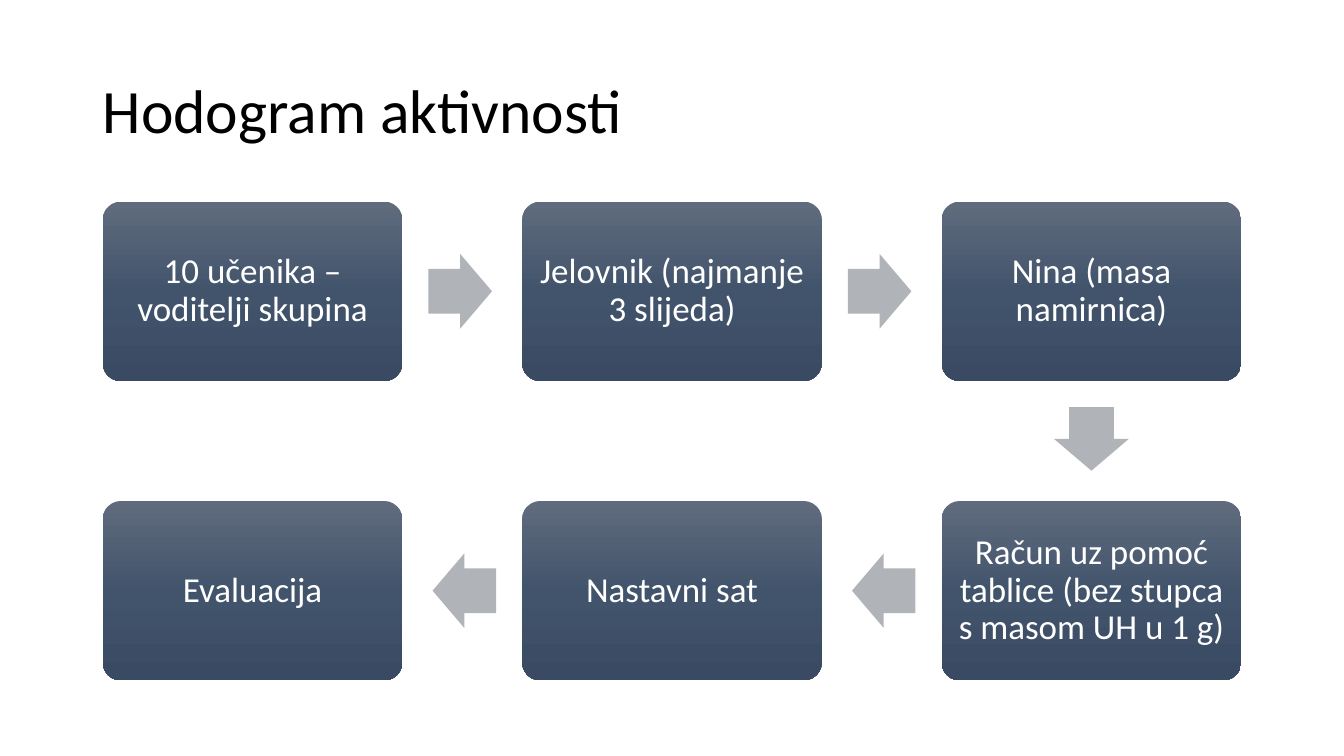
from copy import deepcopy
from dataclasses import dataclass
from math import atan2, degrees, hypot

from lxml import etree
from pptx import Presentation
from pptx.dml.color import RGBColor
from pptx.enum.shapes import MSO_SHAPE as SHAPE
from pptx.enum.text import MSO_ANCHOR as ANCHOR, PP_ALIGN as ALIGN
from pptx.oxml.ns import qn
from pptx.util import Inches, Pt


@dataclass(frozen=True)
class Theme:
    font: str = "Calibri"
    title_size: int = 44
    step_size: int = 25
    title_color: str = "000000"
    step_color: str = "FFFFFF"
    arrow_color: str = "B0B4B9"
    gradient: tuple = ((0, "606B7D"), (0.5, "42546C"), (1, "394A62"))


THEME = Theme()
STEPS = [
    "10 učenika – voditelji skupina",
    "Jelovnik (najmanje 3 slijeda)",
    "Nina (masa namirnica)",
    "Račun uz pomoć tablice (bez stupca s masom UH u 1 g)",
    "Nastavni sat",
    "Evaluacija",
]
COLUMNS = 3
STEP_W, STEP_H = 2.97, 1.78
ARROW_W, ARROW_H = 0.63, 0.74
ARROW_SHIFT = 0.02  # arrows sit slightly nearer the step they leave


def write(shape, text, size, color, align):
    tf = shape.text_frame
    tf.word_wrap = True
    tf.vertical_anchor = ANCHOR.MIDDLE
    p = tf.paragraphs[0]
    p.text = text
    p.alignment = align
    p.line_spacing = 0.9
    p.font.name = THEME.font
    p.font.size = Pt(size)
    p.font.color.rgb = RGBColor.from_string(color)
    return tf


def fill_gradient(sp):
    """Fill from top to bottom with the theme's three stops."""
    sp.fill.gradient()
    sp.fill.gradient_angle = 270
    stop_list = sp._element.spPr.find(qn("a:gradFill")).find(qn("a:gsLst"))
    stop_list.append(deepcopy(stop_list[-1]))
    for stop, (position, color) in zip(sp.fill.gradient_stops, THEME.gradient):
        stop.position = position
        stop.color.rgb = RGBColor.from_string(color)


def add_centered(slide, kind, cx, cy, w, h):
    sp = slide.shapes.add_shape(kind, Inches(cx - w / 2), Inches(cy - h / 2),
                                Inches(w), Inches(h))
    sp.shadow.inherit = False
    sp.line.fill.background()
    return sp


def add_title(slide, text, x, y, w, h):
    sp = slide.shapes.add_textbox(Inches(x), Inches(y), Inches(w), Inches(h))
    write(sp, text, THEME.title_size, THEME.title_color, ALIGN.LEFT)


def add_step(slide, text, cx, cy):
    sp = add_centered(slide, SHAPE.ROUNDED_RECTANGLE, cx, cy, STEP_W, STEP_H)
    sp.adjustments[0] = 0.1
    fill_gradient(sp)
    tf = write(sp, text, THEME.step_size, THEME.step_color, ALIGN.CENTER)
    tf.margin_left = tf.margin_right = Inches(0.1)
    tf.margin_top = tf.margin_bottom = Inches(0.1)


def add_arrow(slide, start, end):
    """Place an arrow midway between two step centres, pointing at the second."""
    dx, dy = end[0] - start[0], end[1] - start[1]
    share = 0.5 - ARROW_SHIFT / hypot(dx, dy)
    sp = add_centered(slide, SHAPE.RIGHT_ARROW, start[0] + dx * share,
                      start[1] + dy * share, ARROW_W, ARROW_H)
    sp.adjustments[0] = 0.6
    sp.adjustments[1] = 0.5
    sp.rotation = degrees(atan2(dy, dx))
    sp.fill.solid()
    sp.fill.fore_color.rgb = RGBColor.from_string(THEME.arrow_color)


def add_flow(slide, steps, x, y, w, h):
    """Lay the steps out in rows that run alternately right and left."""
    rows = -(-len(steps) // COLUMNS)
    pitch_x = (w - STEP_W) / (COLUMNS - 1)
    pitch_y = (h - STEP_H) / (rows - 1)
    centers = []
    for i in range(len(steps)):
        row, col = divmod(i, COLUMNS)
        if row % 2:
            col = COLUMNS - 1 - col
        centers.append((x + STEP_W / 2 + col * pitch_x,
                        y + STEP_H / 2 + row * pitch_y))
    for text, center in zip(steps, centers):
        add_step(slide, text, *center)
    for start, end in zip(centers, centers[1:]):
        add_arrow(slide, start, end)


def main():
    prs = Presentation()
    prs.slide_width, prs.slide_height = Inches(13.33), Inches(7.5)
    slide = prs.slides.add_slide(prs.slide_layouts[6])
    add_title(slide, "Hodogram aktivnosti", 0.92, 0.4, 11.5, 1.45)
    add_flow(slide, STEPS, 1.02, 2, 11.29, 4.75)
    prs.save("out.pptx")


if __name__ == "__main__":
    main()
